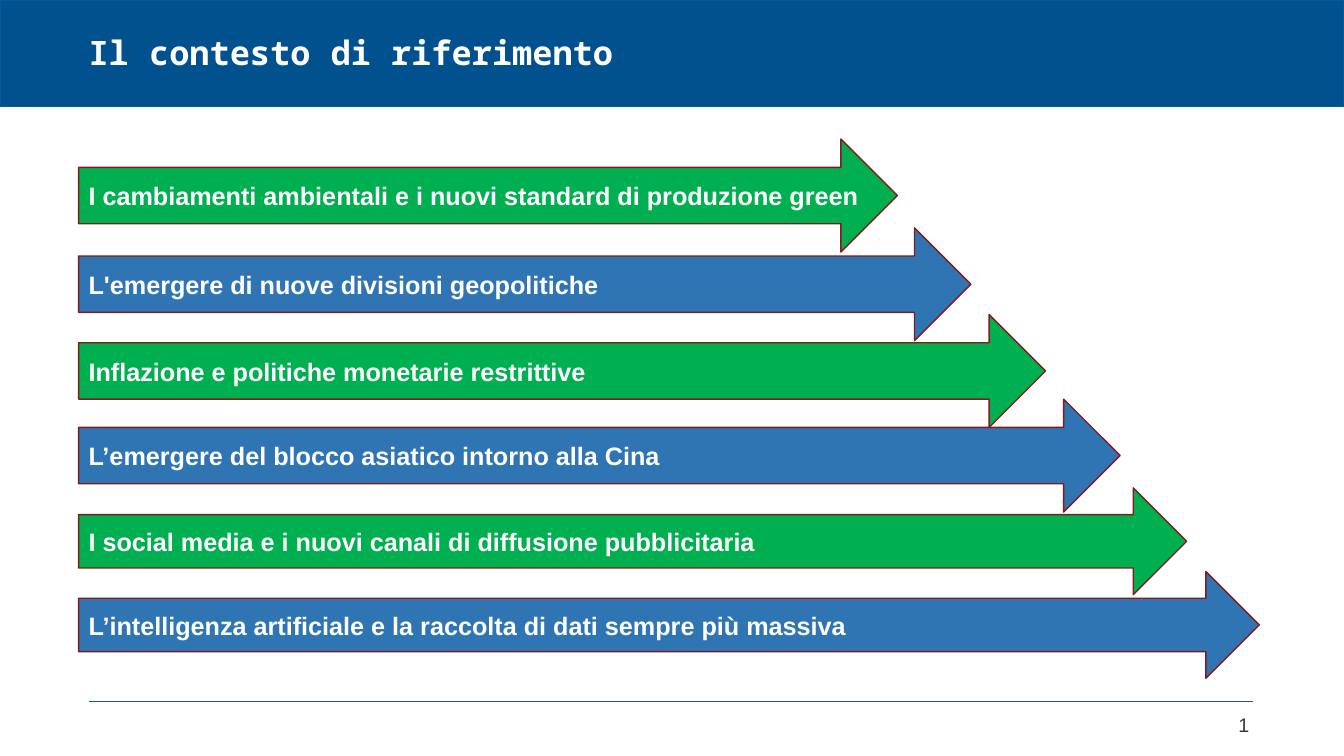
from pptx import Presentation
from pptx.dml.color import RGBColor
from pptx.enum.shapes import MSO_CONNECTOR, MSO_SHAPE
from pptx.enum.text import MSO_ANCHOR, PP_ALIGN
from pptx.oxml.ns import qn
from pptx.util import Inches, Pt
from lxml.etree import SubElement

WHITE = RGBColor(0xFF, 0xFF, 0xFF)
BANNER = RGBColor(0x00, 0x51, 0x8E)
BANNER_EDGE = RGBColor(0x00, 0x5A, 0x9E)
GREEN = RGBColor(0x00, 0xB0, 0x50)
BLUE = RGBColor(0x2F, 0x75, 0xB3)
ARROW_EDGE = RGBColor(0x84, 0x19, 0x19)
RULE = RGBColor(0x2D, 0x50, 0x8F)
GREY = RGBColor(0x3A, 0x38, 0x38)

LEFT = 0.78
TITLE = {"name": "Noto Sans Mono", "size": Pt(24), "bold": True}
LABEL = {"name": "Arial", "size": Pt(18), "bold": True}
NUMBER = {"name": "Arial", "size": Pt(14), "bold": False}

TRENDS = [
    ("I cambiamenti ambientali e i nuovi standard di produzione green", 1.38, 8.12, 1.12),
    ("L'emergere di nuove divisioni geopolitiche", 2.26, 8.85, 1.12),
    ("Inflazione e politiche monetarie restrittive", 3.12, 9.59, 1.12),
    ("L’emergere del blocco asiatico intorno alla Cina", 3.96, 10.33, 1.12),
    ("I social media e i nuovi canali di diffusione pubblicitaria", 4.84, 10.99, 1.06),
    ("L’intelligenza artificiale e la raccolta di dati sempre più massiva", 5.67, 11.71, 1.06),
]


class SlideBuilder:
    """Draws styled elements on one slide."""

    def __init__(self, page):
        self.page = page

    def fill_text(self, shape, text, style, color=WHITE, align=PP_ALIGN.LEFT, spacing=1.0):
        frame = shape.text_frame
        frame.word_wrap = True
        frame.vertical_anchor = MSO_ANCHOR.MIDDLE
        para = frame.paragraphs[0]
        para.alignment = align
        para.line_spacing = spacing
        span = para.add_run()
        span.text = text
        for name, value in style.items():
            setattr(span.font, name, value)
        span.font.color.rgb = color

    def text(self, bounds, text, style, **options):
        box = self.page.shapes.add_textbox(*map(Inches, bounds))
        self.fill_text(box, text, style, **options)

    def shape(self, kind, bounds, fill, edge):
        shape = self.page.shapes.add_shape(kind, *map(Inches, bounds))
        shape.shadow.inherit = False
        shape.fill.solid()
        shape.fill.fore_color.rgb = fill
        shape.line.color.rgb = edge
        shape.line.width = Pt(1)
        return shape

    def arrow(self, text, bounds, fill):
        arrow = self.shape(MSO_SHAPE.RIGHT_ARROW, bounds, fill, ARROW_EDGE)
        self.fill_text(arrow, text, LABEL)

    def line(self, ends, color):
        line = self.page.shapes.add_connector(MSO_CONNECTOR.STRAIGHT, *map(Inches, ends))
        line.line.color.rgb = color
        line.line.width = Pt(1)
        SubElement(line._element.spPr, qn("a:effectLst"))


def main():
    deck = Presentation()
    deck.slide_width = Inches(13.33)
    deck.slide_height = Inches(7.5)
    builder = SlideBuilder(deck.slides.add_slide(deck.slide_layouts[6]))

    builder.line((0.88, 6.96, 12.43, 6.96), RULE)
    builder.shape(MSO_SHAPE.RECTANGLE, (0, 0, 13.33, 1.06), BANNER, BANNER_EDGE)
    builder.text((9.58, 7, 2.91, 0.38), "1", NUMBER, color=GREY, align=PP_ALIGN.RIGHT)
    builder.text((LEFT, 0.06, 10.82, 0.96), "Il contesto di riferimento", TITLE, spacing=0.9)
    for index, (text, top, width, height) in enumerate(TRENDS):
        fill = BLUE if index % 2 else GREEN
        builder.arrow(text, (LEFT, top, width, height), fill)

    deck.save("out.pptx")


if __name__ == "__main__":
    main()
